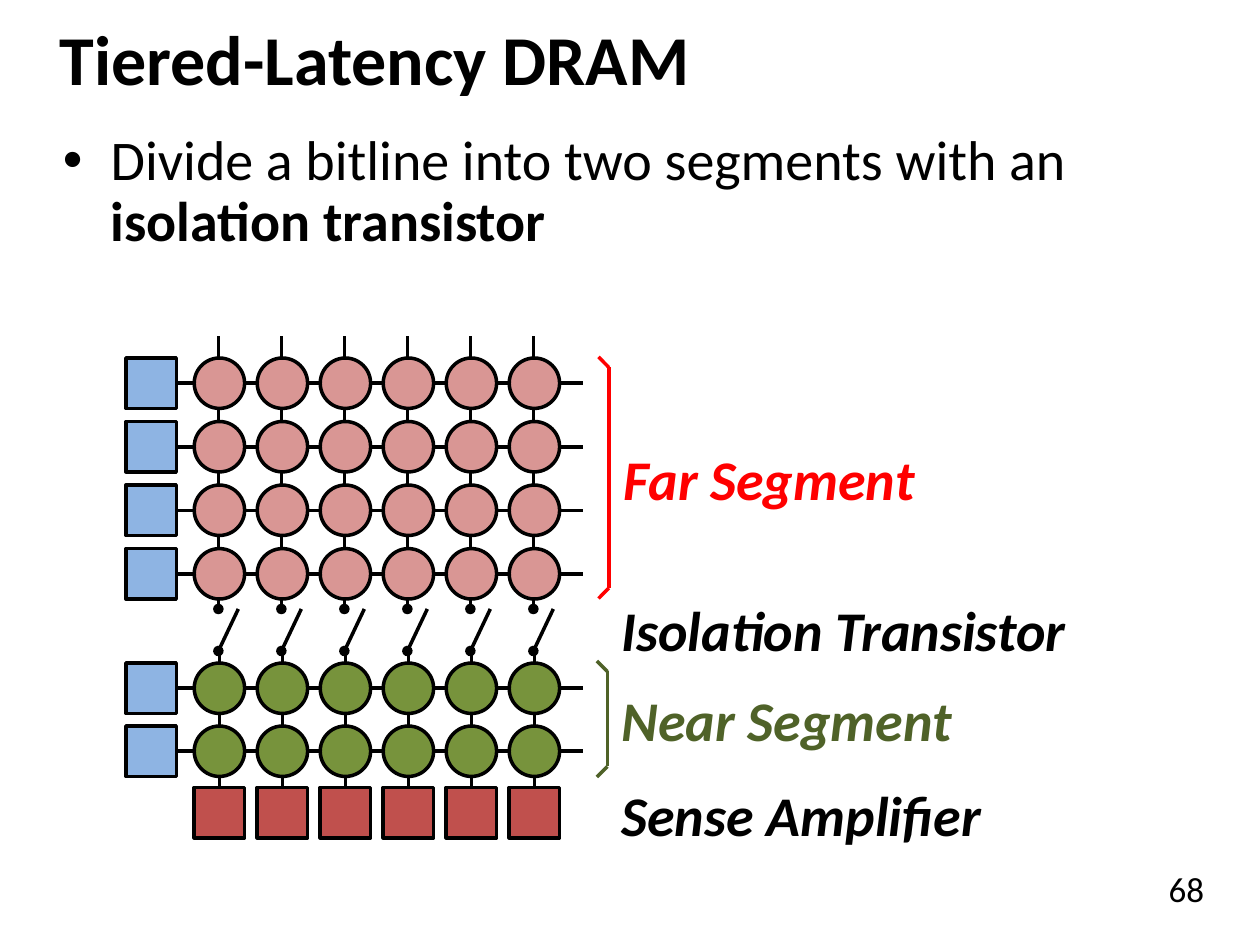
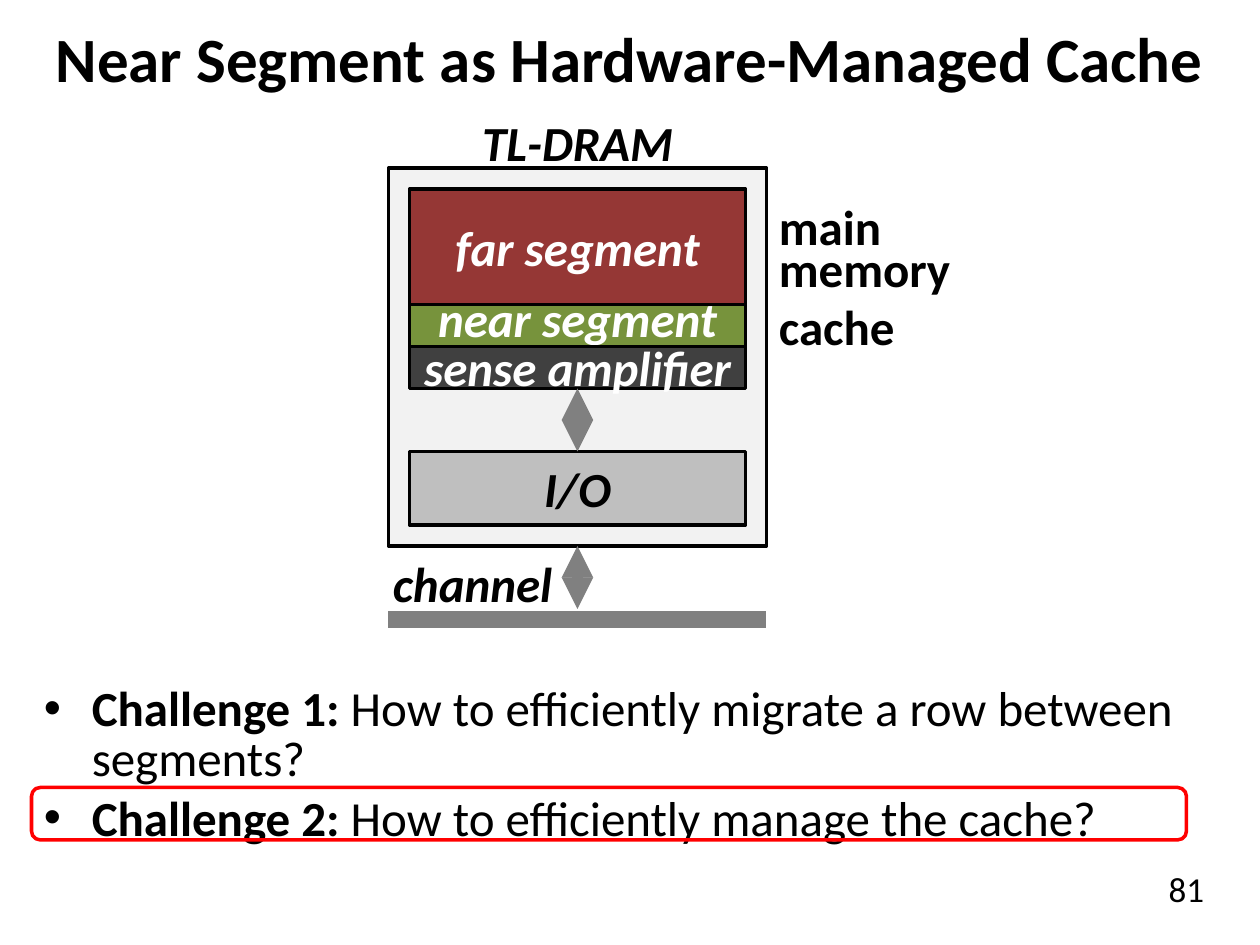
from itertools import pairwise

from lxml.etree import SubElement
from pptx import Presentation
from pptx.dml.color import RGBColor
from pptx.enum.shapes import MSO_CONNECTOR, MSO_SHAPE
from pptx.enum.text import MSO_ANCHOR, MSO_AUTO_SIZE, PP_ALIGN
from pptx.oxml.ns import qn
from pptx.util import Inches, Pt

FONT = "Calibri"
COLUMNS, ROWS = 120, 90

BLACK = RGBColor(0x00, 0x00, 0x00)
WHITE = RGBColor(0xFF, 0xFF, 0xFF)
RED = RGBColor(0xFF, 0x00, 0x00)
DECODER_BLUE = RGBColor(0x8E, 0xB4, 0xE3)
FAR_PINK = RGBColor(0xD9, 0x96, 0x94)
FAR_MAROON = RGBColor(0x95, 0x37, 0x35)
NEAR_GREEN = RGBColor(0x77, 0x93, 0x3C)
NEAR_DARK = RGBColor(0x4F, 0x62, 0x28)
AMPLIFIER_RED = RGBColor(0xC0, 0x50, 0x4D)
AMPLIFIER_GRAY = RGBColor(0x40, 0x40, 0x40)
CHIP_GRAY = RGBColor(0xF2, 0xF2, 0xF2)
IO_GRAY = RGBColor(0xBF, 0xBF, 0xBF)
CHANNEL_GRAY = RGBColor(0x80, 0x80, 0x80)


class Deck:
    """Holds the shared style and the current slide; lengths are grid columns and rows."""

    def __init__(self):
        self.presentation = Presentation()
        self.presentation.slide_width = Inches(10)
        self.presentation.slide_height = Inches(7.5)
        self.column = self.presentation.slide_width // COLUMNS
        self.row = self.presentation.slide_height // ROWS
        self.slide = None

    def grid(self, *lengths):
        """Turn alternating column and row counts into slide lengths."""
        units = (self.column, self.row) * 2
        return [round(length * unit) for length, unit in zip(lengths, units)]

    def style(self, font, size, color=BLACK, bold=False, italic=False):
        font.name, font.size, font.bold, font.italic = FONT, Pt(size), bold, italic
        font.color.rgb = color

    def add_slide(self, title, size, indent, number):
        self.slide = self.presentation.slides.add_slide(self.presentation.slide_layouts[5])
        placeholder = self.slide.shapes.title
        placeholder.left, placeholder.top, placeholder.width, placeholder.height = \
            self.grid(0, 0, COLUMNS, 11)
        frame = placeholder.text_frame
        frame.text = title
        frame.auto_size = MSO_AUTO_SIZE.NONE
        frame.vertical_anchor = MSO_ANCHOR.MIDDLE
        frame.margin_left = round(indent * self.column)
        paragraph = frame.paragraphs[0]
        paragraph.alignment = PP_ALIGN.LEFT
        self.style(paragraph.font, size, bold=True)
        self.label(str(number), 106, 82, 14, 8, 20, bold=False, italic=False,
                   align=PP_ALIGN.CENTER, anchor=MSO_ANCHOR.TOP)

    def text_frame(self, left, top, width, height):
        frame = self.slide.shapes.add_textbox(*self.grid(left, top, width, height)).text_frame
        frame.word_wrap = True
        return frame

    def label(self, text, left, top, width, height, size, color=BLACK, bold=True,
              italic=True, align=PP_ALIGN.LEFT, anchor=MSO_ANCHOR.MIDDLE):
        frame = self.text_frame(left, top, width, height)
        frame.vertical_anchor = anchor
        paragraph = frame.paragraphs[0]
        paragraph.text = text
        paragraph.alignment = align
        self.style(paragraph.font, size, color, bold, italic)

    def bullets(self, items, left, top, width, height, size, line_spacing):
        """Write bullets, each given as a list of (text, bold) pairs."""
        frame = self.text_frame(left, top, width, height)
        for index, item in enumerate(items):
            paragraph = frame.add_paragraph() if index else frame.paragraphs[0]
            paragraph.line_spacing = line_spacing
            paragraph.space_before = Pt(size * 0.2)
            for text, bold in item:
                run = paragraph.add_run()
                run.text = text
                self.style(run.font, size, bold=bold)
            properties = paragraph._p.get_or_add_pPr()
            properties.set("marL", str(Inches(0.38)))
            properties.set("indent", str(-Inches(0.38)))
            SubElement(properties, qn("a:buFont"), typeface="Arial")
            SubElement(properties, qn("a:buChar"), char="•")

    def shape(self, kind, left, top, width, height, fill=None, outline=BLACK):
        shape = self.slide.shapes.add_shape(kind, *self.grid(left, top, width, height))
        shape.shadow.inherit = False
        if fill is None:
            shape.fill.background()
        else:
            shape.fill.solid()
            shape.fill.fore_color.rgb = fill
        shape.line.color.rgb = outline
        shape.line.width = Pt(2)
        return shape

    def line(self, start, end, color=BLACK, width=2, head=None, tail=None):
        connector = self.slide.shapes.add_connector(
            MSO_CONNECTOR.STRAIGHT, *self.grid(*start, *end))
        connector.line.color.rgb = color
        connector.line.width = Pt(width)
        for tag, kind in (("a:headEnd", head), ("a:tailEnd", tail)):
            if kind:
                SubElement(connector.line._get_or_add_ln(), qn(tag), type=kind)
        SubElement(connector._element.spPr, qn("a:effectLst"))
        return connector

    def bracket(self, x, top, bottom, color):
        corners = [(x - 1, top), (x, top + 1), (x, bottom - 1), (x - 1, bottom)]
        for start, end in pairwise(corners):
            self.line(start, end, color)

    def double_arrow(self, start, end):
        return self.line(start, end, CHANNEL_GRAY, 6, "triangle", "triangle")


def add_bitline_slide(deck):
    deck.add_slide("Tiered-Latency DRAM", 40, 5.7, 68)
    cell, half = 4.8, 2.4
    cell_lefts = [18.5 + 6 * index for index in range(6)]
    far_rows = [(34.1 + 6.05 * index, FAR_PINK) for index in range(4)]
    near_rows = [(63.15 + 6 * index, NEAR_GREEN) for index in range(2)]
    amplifier_top, switch_top, switch_bottom = 75, 58, 62

    for left in cell_lefts:
        center = left + half
        deck.line((center - 0.1, switch_top), (center - 0.1, 32), head="oval")
        deck.line((center - 0.1, switch_bottom), (center + 1.8, switch_top), head="oval")
        amplifier = deck.shape(MSO_SHAPE.RECTANGLE, left, amplifier_top, cell, cell,
                               AMPLIFIER_RED)
        bitline = deck.line((center, amplifier_top), (center, switch_bottom))
        bitline.begin_connect(amplifier, 0)

    for top, color in far_rows + near_rows:
        decoder = deck.shape(MSO_SHAPE.RECTANGLE, 12, top, cell, cell, DECODER_BLUE)
        wordline = deck.line((55.5, top + half), (12 + cell, top + half))
        wordline.end_connect(decoder, 3)
        for left in cell_lefts:
            deck.shape(MSO_SHAPE.OVAL, left, top, cell, cell, color)

    deck.bracket(58, 34, 57, RED)
    deck.bracket(57.85, 62.95, 74, NEAR_DARK)
    for text, left, top, height, color in (
            ("Far Segment", 58.2, 43, 5, RED),
            ("Isolation Transistor", 58, 57, 5.9, BLACK),
            ("Near Segment", 58, 66, 5, NEAR_DARK),
            ("Sense Amplifier", 58, 75, 5, BLACK)):
        deck.label(text, left, top, 54, height, 32, color)
    deck.bullets([[("Divide a bitline into two segments with an ", False),
                   ("isolation transistor", True)]], 4.8, 12, 113, 18, 32, 0.9)


def add_cache_slide(deck):
    deck.add_slide("Near Segment as Hardware-Managed Cache", 36, 5.3, 81)
    chip_left, chip_width, inner_left, inner_width, center = 37, 36, 39, 32, 55

    chip = deck.shape(MSO_SHAPE.RECTANGLE, chip_left, 16, chip_width, 36, CHIP_GRAY)
    deck.label("TL-DRAM", chip_left, 11, chip_width, 5, 28, align=PP_ALIGN.CENTER)

    blocks = {}
    for text, top, height, label_top, fill, color in (
            ("far segment", 18, 11, 18, FAR_MAROON, WHITE),
            ("near segment", 29, 4, 28.3, NEAR_GREEN, WHITE),
            ("sense amplifier", 33, 4, 32.9, AMPLIFIER_GRAY, WHITE),
            ("I/O", 43, 7, 43, IO_GRAY, BLACK)):
        blocks[text] = deck.shape(MSO_SHAPE.RECTANGLE, inner_left, top, inner_width, height,
                                  fill)
        deck.label(text, inner_left, label_top, inner_width, height, 28, color,
                   align=PP_ALIGN.CENTER)

    for text, top, height in (("main", 19, 5), ("memory", 23, 5), ("cache", 29, 4)):
        deck.label(text, 73, top, 25, height, 28, italic=False)

    internal_arrow = deck.double_arrow((center, 43), (center, 37))
    internal_arrow.begin_connect(blocks["I/O"], 0)
    internal_arrow.end_connect(blocks["sense amplifier"], 2)
    deck.line((chip_left, 59), (chip_left + chip_width, 59), CHANNEL_GRAY, 10)
    deck.double_arrow((center, 58), (center, 52)).end_connect(chip, 2)
    deck.label("channel", 34, 53, 22, 5, 28, align=PP_ALIGN.CENTER)

    deck.bullets([
        [("Challenge 1: ", True), ("How to efficiently migrate a row between segments?", False)],
        [("Challenge 2: ", True), ("How to efficiently manage the cache?", False)],
    ], 3, 64.8, 116, 16.2, 28, 0.85)
    deck.shape(MSO_SHAPE.ROUNDED_RECTANGLE, 3, 75, 110, 5, outline=RED)


def main():
    deck = Deck()
    add_bitline_slide(deck)
    add_cache_slide(deck)
    deck.presentation.save("out.pptx")


if __name__ == "__main__":
    main()
